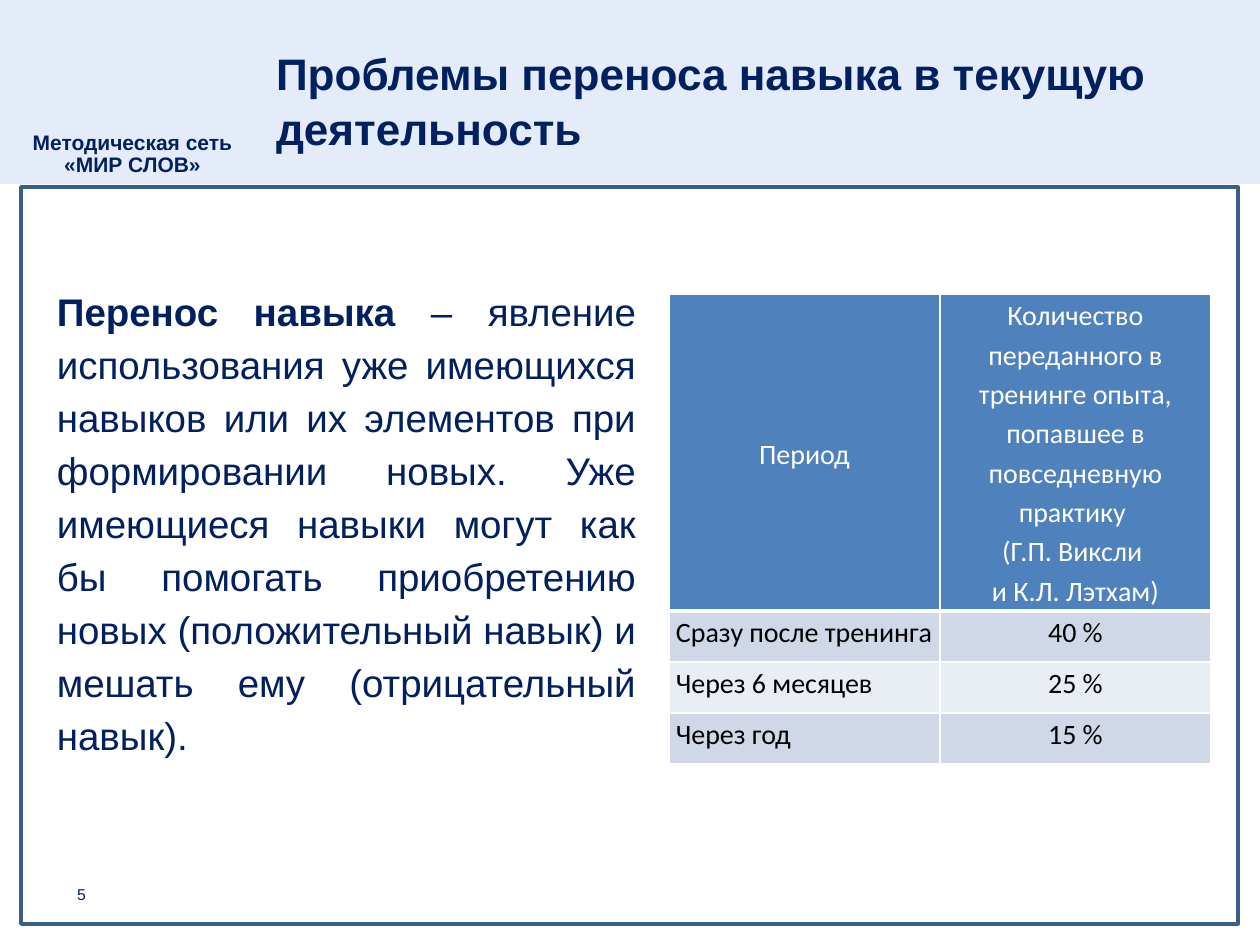
import pptx
import pptx.util
import pptx.dml.color
import pptx.enum.shapes
import pptx.enum.text
import pptx.oxml
import pptx.oxml.ns

ALIGN = pptx.enum.text.PP_ALIGN
ANCHOR = pptx.enum.text.MSO_ANCHOR
RECT = pptx.enum.shapes.MSO_SHAPE.RECTANGLE
PX = 914400 // 126

# Content: a paragraph is a list of (text, bold) runs
NETWORK = [[("Методическая сеть", True)], [("«МИР СЛОВ»", True)]]
TITLE = [[("Проблемы переноса навыка в текущую деятельность", True)]]
DEFINITION = [[
    ("Перенос навыка ", True),
    ("– явление использования уже имеющихся навыков или их элементов при "
     "формировании новых. Уже имеющиеся навыки могут как бы помогать "
     "приобретению новых (положительный навык) и мешать ему "
     "(отрицательный навык).", False),
]]
PAGE = [[("5", False)]]
HEADER = [
    ["Период"],
    ["Количество переданного в тренинге опыта, попавшее в повседневную практику ",
     "(Г.П. Виксли \vи К.Л. Лэтхам)"],
]
RETENTION = [
    ("Сразу после тренинга", "40 %"),
    ("Через 6 месяцев", "25 %"),
    ("Через год", "15 %"),
]
COLORS = {
    "banner": "C6D9F1", "navy": "002060", "frame": "3A5F8C", "header": "4F81BD",
    "odd": "D0D8E8", "even": "E9EDF4", "white": "FFFFFF", "black": "000000",
}


def px(*lengths):
    return [pptx.util.Emu(length * PX) for length in lengths]


def color(name):
    return pptx.dml.color.RGBColor.from_string(COLORS[name])


def write(frame, paragraphs, size, font="Arial", ink="navy", align=ALIGN.LEFT,
          spacing=(1.0,)):
    """Fill a text frame; the last spacing goes on for later paragraphs."""
    frame.word_wrap = True
    for i, runs in enumerate(paragraphs):
        paragraph = frame.paragraphs[0] if i == 0 else frame.add_paragraph()
        paragraph.alignment = align
        paragraph.line_spacing = spacing[min(i, len(spacing) - 1)]
        for text, bold in runs:
            for j, line in enumerate(text.split("\v")):
                if j:
                    paragraph.add_line_break()
                run = paragraph.add_run()
                run.text = line
                run.font.name = font
                run.font.size = pptx.util.Pt(size)
                run.font.bold = bold
                run.font.color.rgb = color(ink)


def add_text(slide, box, paragraphs, size, anchor=ANCHOR.TOP, margins=(13, 6, 13, 6),
             **style):
    frame = slide.shapes.add_textbox(*px(*box)).text_frame
    frame.vertical_anchor = anchor
    (frame.margin_left, frame.margin_top,
     frame.margin_right, frame.margin_bottom) = px(*margins)
    write(frame, paragraphs, size, **style)


def border_cell(cell, bottom, top):
    properties = cell._tc.get_or_add_tcPr()
    widths = {"lnL": 1, "lnR": 1, "lnT": top, "lnB": bottom}
    for place, (side, points) in enumerate(widths.items()):
        properties.insert(place, pptx.oxml.parse_xml(
            f'<a:{side} {pptx.oxml.ns.nsdecls("a")} w="{points * 12700}">'
            f'<a:solidFill><a:srgbClr val="{COLORS["white"]}"/></a:solidFill>'
            f'</a:{side}>'))


def fill_cell(cell, paragraphs, fill, ink, align, anchor, top=1, bottom=1):
    cell.fill.solid()
    cell.fill.fore_color.rgb = color(fill)
    border_cell(cell, bottom, top)
    cell.vertical_anchor = anchor
    (cell.margin_left, cell.margin_top,
     cell.margin_right, cell.margin_bottom) = px(7, 0, 7, 0)
    write(cell.text_frame, [[(text, False)] for text in paragraphs], 16,
          font="Calibri", ink=ink, align=align, spacing=(1.15,))


def add_retention_table(slide):
    column, header_row, row = 271, 317, 51
    rows = len(RETENTION) + 1
    table = slide.shapes.add_table(
        rows, 2, *px(669, 294, 2 * column, header_row + row * len(RETENTION))).table
    for table_column in table.columns:
        table_column.width = px(column)[0]
    for i, table_row in enumerate(table.rows):
        table_row.height = px(row if i else header_row)[0]
    for c, paragraphs in enumerate(HEADER):
        fill_cell(table.cell(0, c), paragraphs, "header", "white", ALIGN.CENTER,
                  ANCHOR.TOP if c else ANCHOR.MIDDLE, bottom=3)
    for r, values in enumerate(RETENTION, 1):
        for c, value in enumerate(values):
            fill_cell(table.cell(r, c), [value], "odd" if r % 2 else "even", "black",
                      ALIGN.CENTER if c else ALIGN.LEFT, ANCHOR.TOP,
                      top=3 if r == 1 else 1)


def main():
    deck = pptx.Presentation()
    deck.slide_width, deck.slide_height = px(1260, 945)
    slide = deck.slides.add_slide(deck.slide_layouts[6])

    # Half-transparent banner
    banner = slide.shapes.add_shape(RECT, *px(0, 0, 1260, 184))
    banner.shadow.inherit = False
    banner.line.fill.background()
    banner.fill.solid()
    banner.fill.fore_color.rgb = color("banner")
    tint = banner.fill._xPr.find(".//" + pptx.oxml.ns.qn("a:srgbClr"))
    tint.append(pptx.oxml.parse_xml(
        f'<a:alpha {pptx.oxml.ns.nsdecls("a")} val="49000"/>'))

    # Network name
    add_text(slide, (20, 116, 233, 67), NETWORK, 12, anchor=ANCHOR.BOTTOM,
             margins=(5, 6, 13, 6), align=ALIGN.CENTER, spacing=(1.04, 0.9))

    # Content frame
    frame = slide.shapes.add_shape(RECT, *px(21, 187, 1217, 737))
    frame.shadow.inherit = False
    frame.fill.background()
    frame.line.color.rgb = color("frame")
    frame.line.width = pptx.util.Pt(2)

    # Title, definition, table and page number
    add_text(slide, (263, 20, 978, 158), TITLE, 25.2, anchor=ANCHOR.MIDDLE,
             spacing=(1.04,))
    add_text(slide, (44, 275, 605, 570), DEFINITION, 22, align=ALIGN.JUSTIFY,
             spacing=(1.15,))
    add_retention_table(slide)
    add_text(slide, (25, 869, 74, 50), PAGE, 9, anchor=ANCHOR.MIDDLE,
             align=ALIGN.RIGHT)

    deck.save("out.pptx")


if __name__ == "__main__":
    main()
